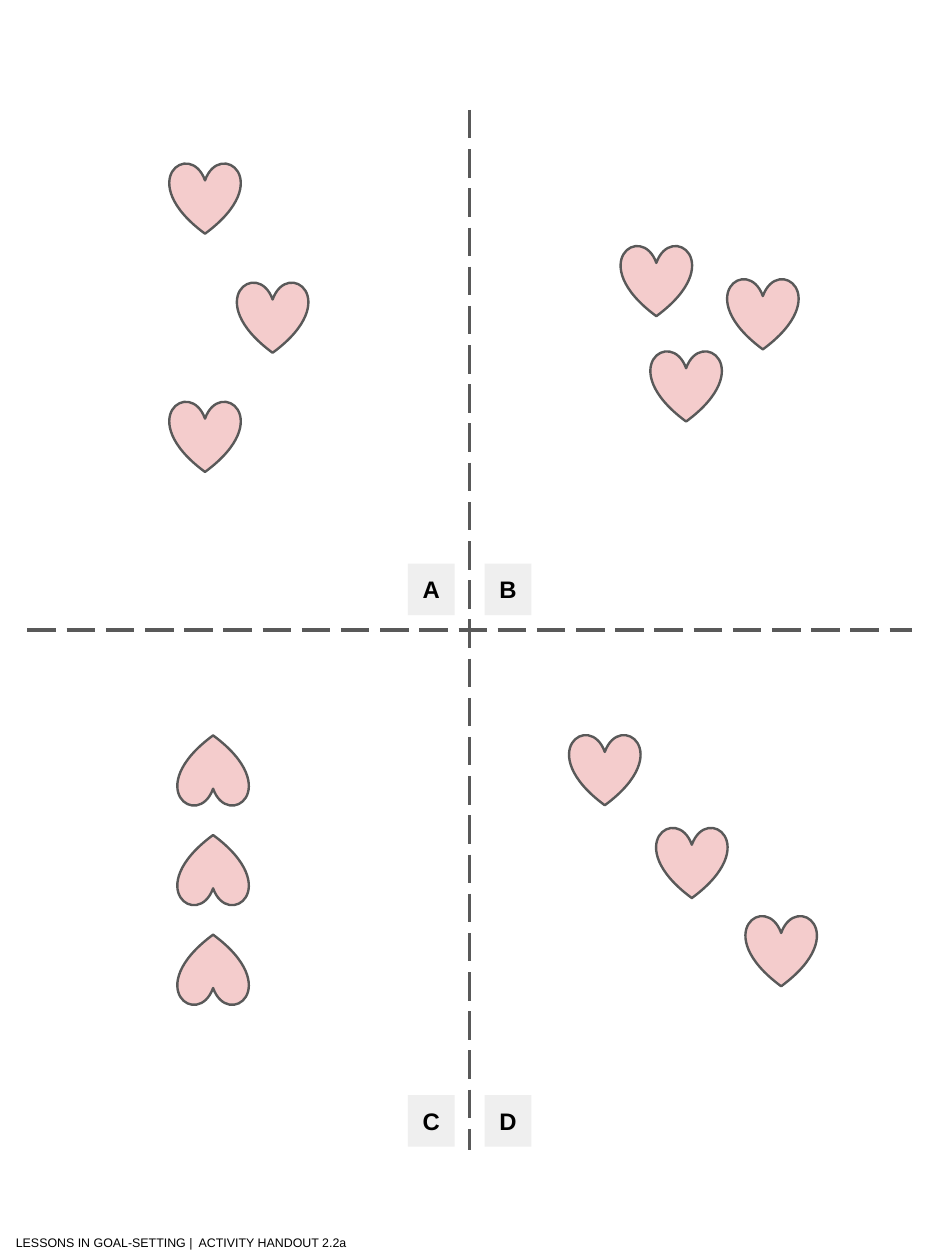
"""Build a handout page with four heart patterns in labelled quadrants."""
from dataclasses import dataclass

from lxml import etree
from pptx import Presentation
from pptx.dml.color import RGBColor
from pptx.enum import dml, shapes, text
from pptx.oxml import ns
from pptx.util import Inches, Pt


@dataclass(frozen=True)
class Theme:
    heart: RGBColor = RGBColor(0xF4, 0xCC, 0xCC)
    line: RGBColor = RGBColor(0x59, 0x59, 0x59)
    label: RGBColor = RGBColor(0xEF, 0xEF, 0xEF)
    ink: RGBColor = RGBColor(0, 0, 0)
    font: str = "Arial"
    label_size: float = 15
    footer_size: float = 7.8
    outline: float = 1.5
    divider: float = 2.25


theme = Theme()


def add_block(s, kind, left, top, width, height, fill):
    sp = s.shapes.add_shape(
        kind, Inches(left), Inches(top), Inches(width), Inches(height))
    sp.shadow.inherit = False
    sp.fill.solid()
    sp.fill.fore_color.rgb = fill
    return sp


def write(sp, words, size, bold, align):
    tf = sp.text_frame
    tf.word_wrap = True
    tf.auto_size = text.MSO_AUTO_SIZE.SHAPE_TO_FIT_TEXT
    tf.vertical_anchor = text.MSO_ANCHOR.TOP
    tf.margin_left = tf.margin_right = Inches(0.1)
    tf.margin_top = tf.margin_bottom = Inches(0.1)
    p = tf.paragraphs[0]
    p.text = words
    p.alignment = align
    p.font.name = theme.font
    p.font.size = Pt(size)
    p.font.bold = bold
    p.font.color.rgb = theme.ink


prs = Presentation()
prs.slide_width = Inches(8.25)
prs.slide_height = Inches(11)
s = prs.slides.add_slide(prs.slide_layouts[6])

dividers = [(0.24, 5.5, 7.96, 5.5), (4.1, 0.96, 4.1, 10.04)]
for ends in dividers:
    line = s.shapes.add_connector(
        shapes.MSO_CONNECTOR.STRAIGHT, *[Inches(v) for v in ends])
    line.line.color.rgb = theme.line
    line.line.width = Pt(theme.divider)
    line.line.dash_style = dml.MSO_LINE.LONG_DASH
    etree.SubElement(line._element.spPr, ns.qn("a:effectLst"))

heart_size = 0.62
patterns = {
    "A": [(1.48, 1.42), (2.07, 2.46), (1.48, 3.5)],
    "B": [(5.42, 2.14), (6.35, 2.43), (5.68, 3.06)],
    "C": [(1.55, 6.42 + 0.87 * i) for i in range(3)],
    "D": [(4.97, 6.41), (5.73, 7.22), (6.51, 7.99)],
}
for i, (letter, spots) in enumerate(patterns.items()):
    for left, top in spots:
        heart = add_block(s, shapes.MSO_SHAPE.HEART, left, top,
                          heart_size, heart_size, theme.heart)
        heart.line.color.rgb = theme.line
        heart.line.width = Pt(theme.outline)
        heart.rotation = 180 if letter == "C" else 0
    row, col = divmod(i, 2)
    label = add_block(s, shapes.MSO_SHAPE.RECTANGLE, 3.56 + 0.67 * col,
                      4.92 + 4.64 * row, 0.41, 0.45, theme.label)
    label.line.fill.background()
    write(label, letter, theme.label_size, True, text.PP_ALIGN.CENTER)

footer = s.shapes.add_textbox(
    Inches(0.04), Inches(10.72), Inches(3.36), Inches(0.33))
write(footer, "LESSONS IN GOAL-SETTING |  ACTIVITY HANDOUT 2.2a",
      theme.footer_size, False, text.PP_ALIGN.LEFT)

prs.save("out.pptx")
